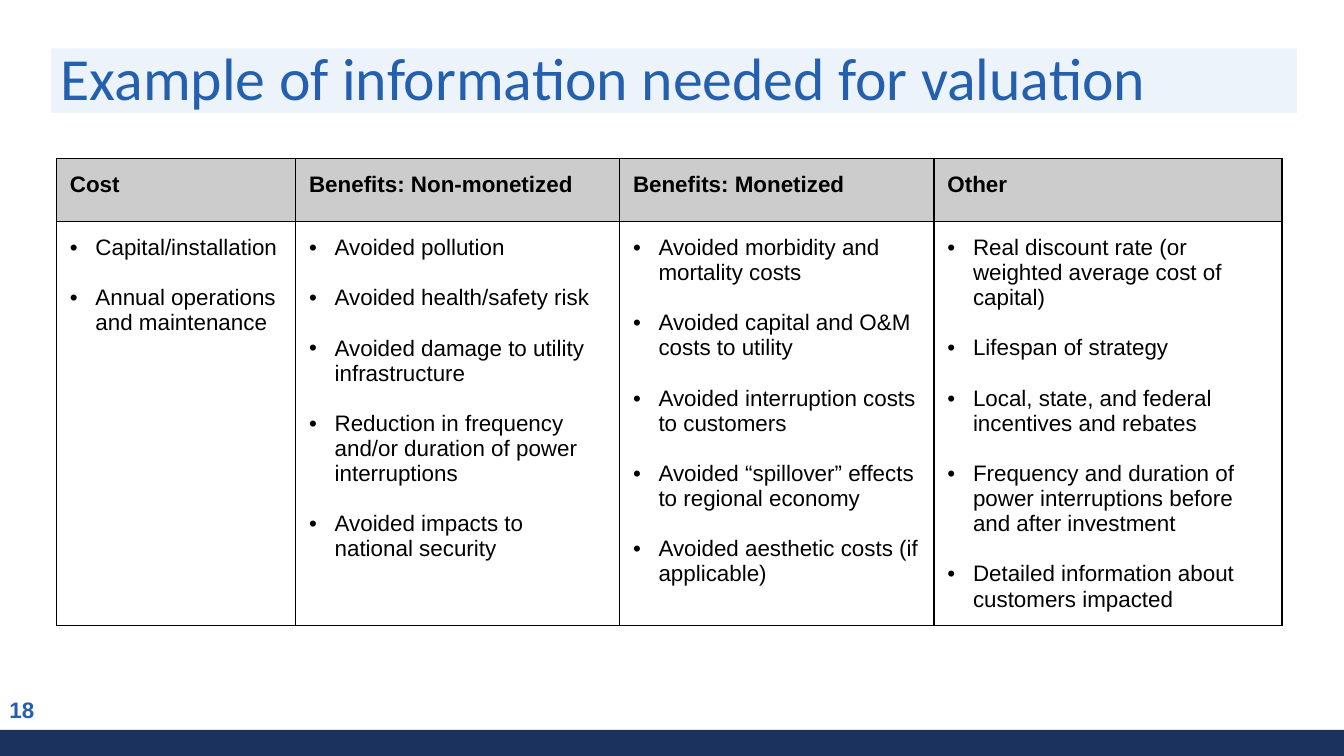
"""Build a slide with a four-column table of information needed for valuation."""
from lxml import etree
from pptx import Presentation
from pptx.dml.color import RGBColor
from pptx.enum.shapes import MSO_SHAPE
from pptx.enum.text import MSO_ANCHOR, MSO_AUTO_SIZE, PP_ALIGN
from pptx.oxml.ns import qn
from pptx.util import Inches, Pt

RECT = MSO_SHAPE.RECTANGLE
MIDDLE = MSO_ANCHOR.MIDDLE
NO_FIT = MSO_AUTO_SIZE.NONE
LEFT = PP_ALIGN.LEFT

COLORS = {"navy": "1A325D", "pale": "ECF3FA", "blue": "2460AD",
          "grey": "CCCCCC", "white": "FFFFFF", "black": "000000"}
TABLE = {
    "Cost": ["Capital/installation", "Annual operations and maintenance"],
    "Benefits: Non-monetized": [
        "Avoided pollution", "Avoided health/safety risk",
        "Avoided damage to utility infrastructure",
        "Reduction in frequency and/or duration of power interruptions",
        "Avoided impacts to national security"],
    "Benefits: Monetized": [
        "Avoided morbidity and mortality costs",
        "Avoided capital and O&M costs to utility",
        "Avoided interruption costs to customers",
        "Avoided “spillover” effects to regional economy",
        "Avoided aesthetic costs (if applicable)"],
    "Other": [
        "Real discount rate (or weighted average cost of capital)",
        "Lifespan of strategy",
        "Local, state, and federal incentives and rebates",
        "Frequency and duration of power interruptions before and after investment",
        "Detailed information about customers impacted"],
}
COL_WIDTHS = [1.78, 2.41, 2.34, 2.59]
ROW_HEIGHTS = [0.47, 3]
FRAME = {"margin_left": Inches(0.07), "margin_right": Inches(0.07),
         "margin_top": Inches(0.03), "margin_bottom": Inches(0.03),
         "vertical_anchor": MIDDLE, "word_wrap": True, "auto_size": NO_FIT}
CELL = {f"margin_{side}": Inches(0.1) for side in ("left", "right", "top", "bottom")}


def set_all(obj, values):
    for name, value in values.items():
        setattr(obj, name, value)


def add_text(p, text, font, size, color, bold=False):
    r = p.add_run()
    r.text = text
    set_all(r.font, {"name": font, "size": Pt(size), "bold": bold})
    r.font.color.rgb = RGBColor.from_string(COLORS[color])


prs = Presentation()
prs.slide_width = Inches(10)
prs.slide_height = prs.slide_width * 9 // 16
s = prs.slides.add_slide(prs.slide_layouts[5])

bar_top = Inches(5.43)
bar = (0, bar_top, prs.slide_width, prs.slide_height - bar_top)
band = tuple(map(Inches, (0.38, 0.36, 9.27, 0.48)))
for color, box in (("navy", bar), ("pale", band)):
    sp = s.shapes.add_shape(RECT, *box)
    sp.shadow.inherit = False
    sp.fill.solid()
    sp.fill.fore_color.rgb = RGBColor.from_string(COLORS[color])
    sp.line.fill.background()

title = s.shapes.title
set_all(title, dict(zip(("left", "top", "width", "height"),
                        map(Inches, (0.38, 0.29, 9.2, 0.62)))))
s.shapes._spTree.append(title._element)
number = s.shapes.add_textbox(*map(Inches, (0, 5.13, 2.25, 0.3)))
for sp, content in (
        (title, ("Example of information needed for valuation", "Calibri", 32, "blue")),
        (number, ("18", "Arial", 12, "blue", True))):
    set_all(sp.text_frame, FRAME)
    p = sp.text_frame.paragraphs[0]
    p.alignment = LEFT
    add_text(p, *content)
title.text_frame.paragraphs[0].line_spacing = 0.9

table = s.shapes.add_table(2, len(TABLE), Inches(0.42), Inches(1.18),
                           Inches(sum(COL_WIDTHS)), Inches(sum(ROW_HEIGHTS))).table
set_all(table, {"first_row": False, "horz_banding": False})
for row, height in zip(table.rows, ROW_HEIGHTS):
    row.height = Inches(height)

for c, (heading, items) in enumerate(TABLE.items()):
    table.columns[c].width = Inches(COL_WIDTHS[c])
    head, body = table.cell(0, c), table.cell(1, c)
    add_text(head.text_frame.paragraphs[0], heading, "Arial", 12, "black", True)

    for i, item in enumerate(items):
        tf = body.text_frame
        p = tf.add_paragraph() if i else tf.paragraphs[0]
        p.space_before = Pt(13.5 if i else 0)
        pPr = p._p.get_or_add_pPr()
        pPr.set("marL", str(Inches(0.19)))
        pPr.set("indent", str(-Inches(0.19)))
        clr = etree.SubElement(pPr, qn("a:buClr"))
        etree.SubElement(clr, qn("a:srgbClr"), val=COLORS["black"])
        etree.SubElement(pPr, qn("a:buFont"), typeface="Arial")
        etree.SubElement(pPr, qn("a:buChar"), char="•")
        add_text(p, item, "Arial", 12, "black")

    for cell, color in ((head, "grey"), (body, "white")):
        set_all(cell, CELL)
        cell.fill.solid()
        cell.fill.fore_color.rgb = RGBColor.from_string(COLORS[color])
        tcPr = cell._tc.get_or_add_tcPr()
        for i, side in enumerate(("lnL", "lnR", "lnT", "lnB")):
            ln = etree.Element(qn(f"a:{side}"), w=str(Pt(0.75)))
            fill = etree.SubElement(ln, qn("a:solidFill"))
            etree.SubElement(fill, qn("a:srgbClr"), val=COLORS["black"])
            tcPr.insert(i, ln)

prs.save("out.pptx")
